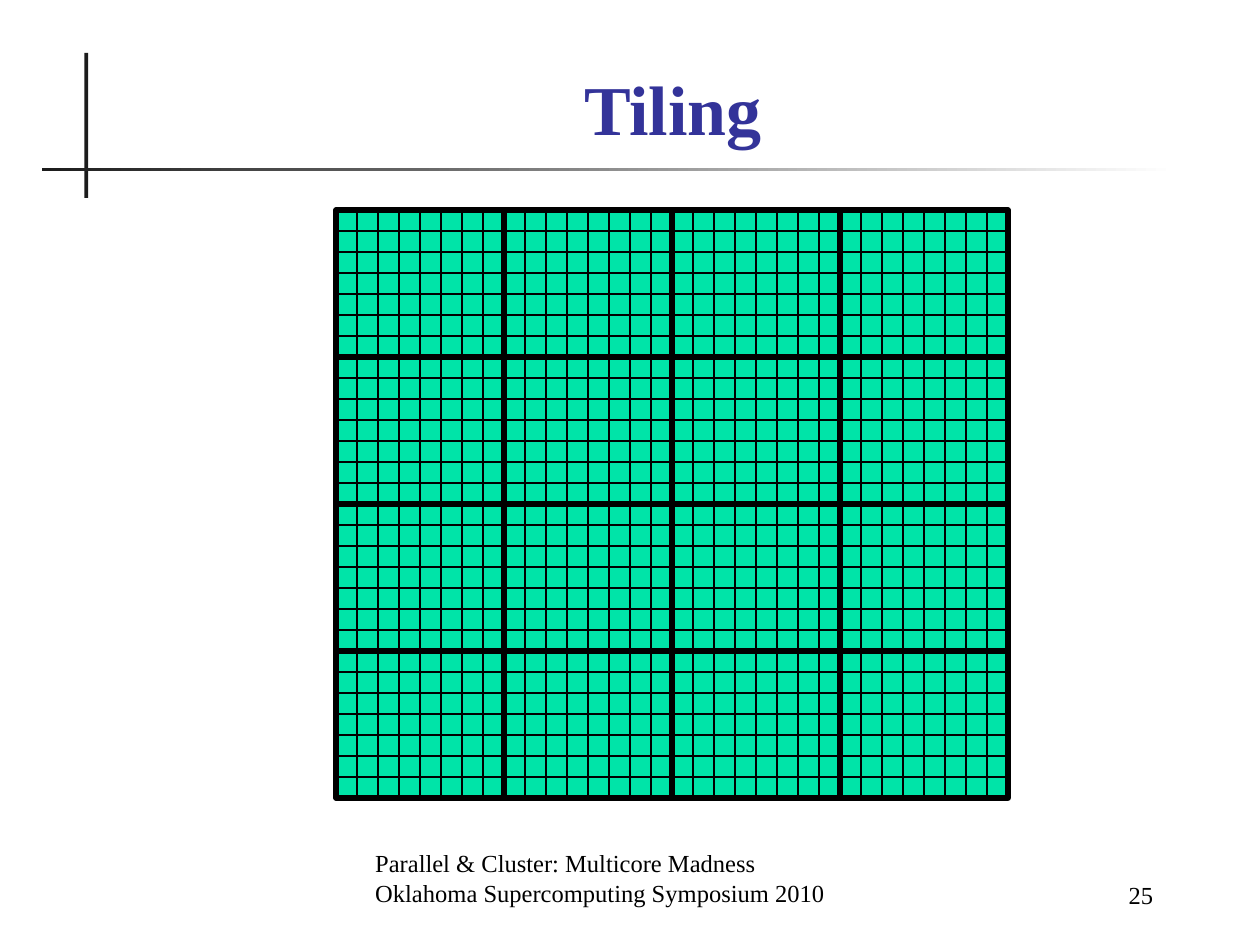
from pptx import Presentation
from pptx.dml.color import RGBColor
from pptx.enum.shapes import MSO_CONNECTOR as Conn, MSO_SHAPE as Shape
from pptx.enum.text import MSO_ANCHOR as Anchor, MSO_AUTO_SIZE as Auto, PP_ALIGN as Align
from pptx.oxml.ns import qn
from pptx.util import Inches, Pt
from lxml import etree

TITLE = "Tiling"
FOOTER = ["Parallel & Cluster: Multicore Madness",
          "Oklahoma Supercomputing Symposium 2010"]
PAGE = ["25"]
FONT = "Times New Roman"
BLACK, DARK, WHITE, BLUE, GREEN = "000000", "1C1C1C", "FFFFFF", "333399", "00E4A8"

CELL = 1 / 6
LEFT, TOP = 16 * CELL, 10 * CELL
TILES = 4
WIDE, HIGH = 8, 7
COLS, ROWS = TILES * WIDE, TILES * HIGH


def color(text):
    return RGBColor.from_string(text)


def place(shape, *box):
    shape.left, shape.top, shape.width, shape.height = map(Inches, box)


def add_rect(parent, box, fill=None, weight=None):
    rect = parent.add_shape(Shape.RECTANGLE, *map(Inches, box))
    rect.shadow.inherit = False
    if fill:
        rect.fill.solid()
        rect.fill.fore_color.rgb = color(fill)
    else:
        rect.fill.background()
    if weight:
        rect.line.color.rgb = color(BLACK)
        rect.line.width = Pt(weight)
    else:
        rect.line.fill.background()
    return rect


def add_line(parent, *ends):
    line = parent.add_connector(Conn.STRAIGHT, *map(Inches, ends))
    line.line.color.rgb = color(BLACK)
    line.line.width = Pt(0.75)
    etree.SubElement(line._element.spPr, qn("a:effectLst"))


def write(frame, lines, size, tint, align, bold=False):
    frame.word_wrap = True
    frame.auto_size = Auto.NONE
    frame.vertical_anchor = Anchor.BOTTOM
    frame.text = "\n".join(lines)
    for para in frame.paragraphs:
        para.alignment = align
        font = para.font
        font.name, font.size, font.bold = FONT, Pt(size), bold
        font.color.rgb = color(tint)


def add_grid(shapes):
    grid = shapes.add_group_shape().shapes
    width, height = COLS * CELL, ROWS * CELL
    add_rect(grid, (LEFT, TOP, width, height), GREEN, 0.75)
    for col in range(1, COLS):
        x = LEFT + col * CELL
        add_line(grid, x, TOP, x, TOP + height)
    for row in range(1, ROWS):
        y = TOP + row * CELL
        add_line(grid, LEFT, y, LEFT + width, y)
    wide, high = WIDE * CELL, HIGH * CELL
    for row in range(TILES):
        for col in range(TILES):
            add_rect(grid, (LEFT + col * wide, TOP + row * high, wide, high), weight=3)


def main():
    deck = Presentation()
    deck.slide_width, deck.slide_height = Inches(10), Inches(7.5)
    slide = deck.slides.add_slide(deck.slide_layouts[5])
    shapes = slide.shapes

    add_rect(shapes, (0.67, 0.42, 0.03, 1.15), DARK)
    rule = add_rect(shapes, (0.33, 1.33, 9, 0.03))
    rule.fill.gradient()
    rule.fill.gradient_angle = 0
    for stop, tint in zip(rule.fill.gradient_stops, (DARK, WHITE)):
        stop.color.rgb = color(tint)

    place(shapes.title, 1.08, 0.5, 8.52, 0.74)
    write(shapes.title.text_frame, [TITLE], 40, BLUE, Align.CENTER, True)

    for lines, box, align in ((FOOTER, (2.88, 6.75, 4.37, 0.5), Align.LEFT),
                              (PAGE, (7.83, 6.77, 1.42, 0.5), Align.RIGHT)):
        note = shapes.add_textbox(*map(Inches, box))
        write(note.text_frame, lines, 14, BLACK, align)

    add_grid(shapes)
    deck.save("out.pptx")


if __name__ == "__main__":
    main()
